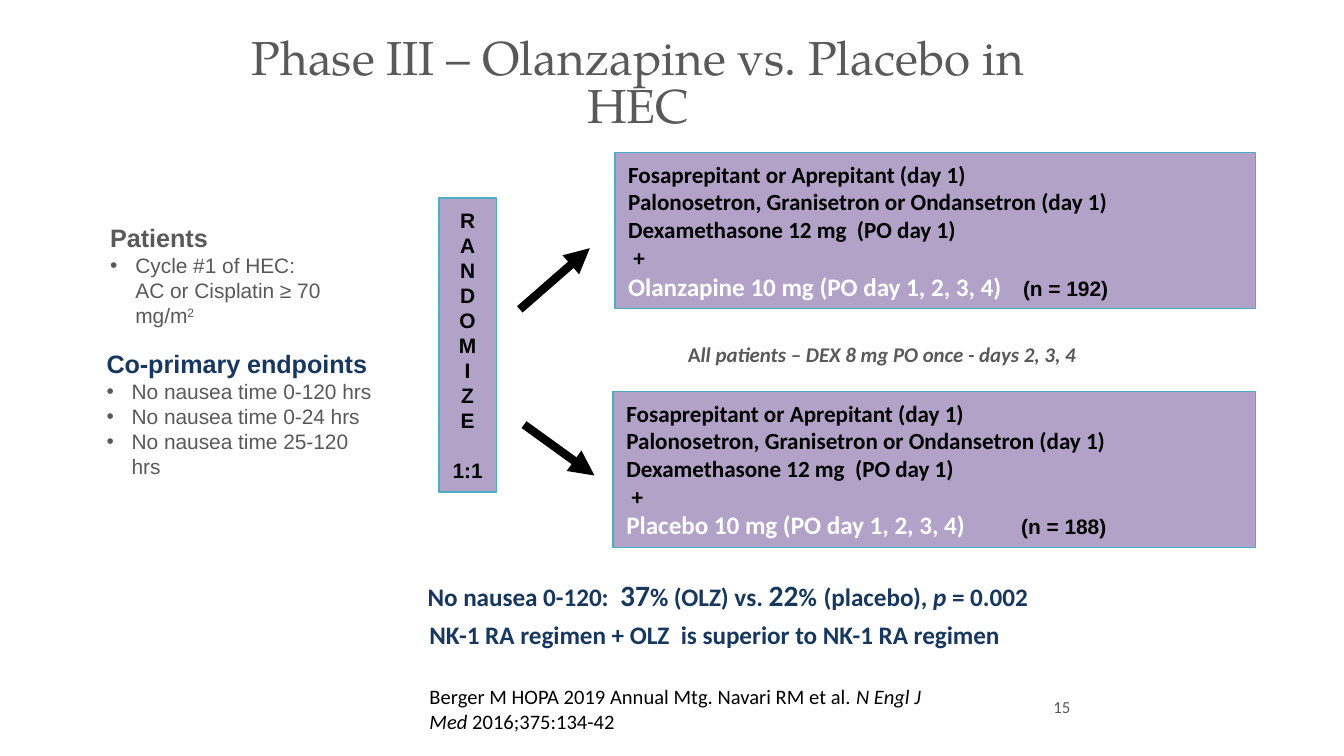
import pptx
import pptx.util
import pptx.dml.color
import pptx.enum.shapes
import pptx.enum.text
import pptx.oxml.ns
from lxml import etree

Pt = pptx.util.Pt
RGBColor = pptx.dml.color.RGBColor
Align = pptx.enum.text.PP_ALIGN
Anchor = pptx.enum.text.MSO_ANCHOR
qn = pptx.oxml.ns.qn

BLACK = RGBColor(0x00, 0x00, 0x00)
WHITE = RGBColor(0xFF, 0xFF, 0xFF)
GREY = RGBColor(0x59, 0x59, 0x59)
NAVY = RGBColor(0x17, 0x37, 0x5E)
LILAC = RGBColor(0xB3, 0xA2, 0xC7)
TEAL = RGBColor(0x4B, 0xAC, 0xC6)


class TrialSlide:
    """Holds the text style and the current slide; lengths are in points."""

    indent = 13.5

    def __init__(self, deck):
        self.page = deck.slides.add_slide(deck.slide_layouts[5])

    def span(self, para, text, size, color, font="Calibri", bold=False,
             italic=False, raised=False):
        span = para.add_run()
        span.text = text
        span.font.size = Pt(size)
        span.font.name = font
        span.font.bold = bold
        span.font.italic = italic
        span.font.color.rgb = color
        if raised:
            span.font._element.set("baseline", "30000")

    def fill_text(self, frame, lines, align=Align.LEFT, anchor=Anchor.TOP):
        """Each line is a list of (text, size, color, options) runs."""
        frame.word_wrap = True
        frame.auto_size = pptx.enum.text.MSO_AUTO_SIZE.NONE
        frame.vertical_anchor = anchor
        for index, runs in enumerate(lines):
            para = frame.add_paragraph() if index else frame.paragraphs[0]
            para.alignment = align
            for text, size, color, options in runs:
                self.span(para, text, size, color, **options)
        return frame

    def title(self, text, left, top, width, height):
        box = self.page.shapes.title
        box.left, box.top, box.width, box.height = map(Pt, (left, top, width, height))
        runs = [(text, 25.5, GREY, {"font": "TeX Gyre Pagella"})]
        frame = self.fill_text(box.text_frame, [runs], Align.CENTER, Anchor.MIDDLE)
        frame.paragraphs[0].line_spacing = 0.85

    def text(self, left, top, width, height, lines, align=Align.LEFT):
        box = self.page.shapes.add_textbox(*map(Pt, (left, top, width, height)))
        return self.fill_text(box.text_frame, lines, align)

    def bullets(self, left, top, width, height, heading, color, items):
        head = [(heading, 13.5, color, {"font": "Arial", "bold": True})]
        frame = self.text(left, top, width, height, [head])
        for parts in items:
            para = frame.add_paragraph()
            properties = para._p.get_or_add_pPr()
            properties.set("marL", str(Pt(self.indent)))
            properties.set("indent", str(-Pt(self.indent)))
            bullet_font = etree.SubElement(properties, qn("a:buFont"))
            bullet_font.set("typeface", "Arial")
            etree.SubElement(properties, qn("a:buChar")).set("char", "•")
            for text, raised in parts:
                if text == "\n":
                    para.add_line_break()
                else:
                    self.span(para, text, 11.2, GREY, "Arial", raised=raised)

    def panel(self, left, top, width, height, border, lines, align=Align.LEFT):
        box = self.page.shapes.add_shape(
            pptx.enum.shapes.MSO_SHAPE.RECTANGLE, *map(Pt, (left, top, width, height)))
        box.shadow.inherit = False
        box.fill.solid()
        box.fill.fore_color.rgb = LILAC
        box.line.color.rgb = TEAL
        box.line.width = Pt(border)
        return self.fill_text(box.text_frame, lines, align, Anchor.MIDDLE)

    def arm(self, left, top, width, height, drug, count):
        bold = {"bold": True}
        shared = ("Fosaprepitant or Aprepitant (day 1)",
                  "Palonosetron, Granisetron or Ondansetron (day 1)",
                  "Dexamethasone 12 mg  (PO day 1)",
                  " +")
        lines = [[(text, 12.4, BLACK, bold)] for text in shared]
        lines.append([(f"{drug} 10 mg (PO day 1, 2, 3, 4)\t", 13.5, WHITE, bold),
                      (f"(n = {count})", 11.2, BLACK, {"font": "Arial", "bold": True})])
        frame = self.panel(left, top, width, height, 0.75, lines)
        # Patient count sits on a tab stop
        properties = frame.paragraphs[-1]._p.get_or_add_pPr()
        stops = etree.SubElement(properties, qn("a:tabLst"))
        stop = etree.SubElement(stops, qn("a:tab"))
        stop.set("pos", str(Pt(211.5)))
        stop.set("algn", "l")

    def arrow(self, x1, y1, x2, y2):
        line = self.page.shapes.add_connector(
            pptx.enum.shapes.MSO_CONNECTOR.STRAIGHT, *map(Pt, (x1, y1, x2, y2)))
        line.line.color.rgb = BLACK
        line.line.width = Pt(4.5)
        etree.SubElement(line.line._get_or_add_ln(), qn("a:tailEnd")).set("type", "triangle")
        etree.SubElement(line._element.spPr, qn("a:effectLst"))


def main():
    deck = pptx.Presentation()
    deck.slide_width, deck.slide_height = Pt(720), Pt(405)
    slide = TrialSlide(deck)
    bold = {"bold": True}
    bold_italic = {"bold": True, "italic": True}

    slide.title("Phase III – Olanzapine vs. Placebo in HEC", 97, 24, 490, 43)

    # Patients and endpoints
    slide.bullets(52, 115.5, 152, 65, "Patients", GREY, [
        [("Cycle #1 of HEC:", False), ("\n", False),
         ("AC or Cisplatin ≥ 70 mg/m", False), ("2", True)]])
    slide.bullets(50, 183, 160, 78, "Co-primary endpoints", NAVY, [
        [(f"No nausea time {hours} hrs", False)] for hours in ("0-120", "0-24", "25-120")])

    # Randomization and the two arms
    slide.arrow(278.5, 165.75, 316, 133)
    slide.arrow(280.75, 227.5, 318.5, 254.75)
    arial_bold = {"font": "Arial", "bold": True}
    letters = [[(text, 11.2, BLACK, arial_bold)] for text in [*"RANDOMIZE", "1:1"]]
    column = slide.panel(235, 106, 31, 157.5, 1, letters, Align.CENTER)
    column.margin_left = column.margin_right = 0
    column.paragraphs[-1].space_before = Pt(13)
    slide.arm(329.5, 81.75, 343, 83.5, "Olanzapine", 192)
    slide.arm(328.5, 209.75, 344, 83.5, "Placebo", 188)
    slide.text(361.5, 179.5, 230, 21, [[
        ("A", 11.2, GREY, bold),
        ("ll patients – DEX 8 mg PO once - days 2, 3, 4", 11.2, GREY, bold_italic)]])

    # Results
    slide.text(222, 305.5, 345, 26, [[
        ("No nausea 0-120:  ", 13.5, NAVY, bold),
        ("37", 15.8, NAVY, bold),
        ("% (OLZ) vs. ", 13.5, NAVY, bold),
        ("22", 15.8, NAVY, bold),
        ("%", 13.5, NAVY, bold),
        (" ", 15.8, NAVY, bold),
        ("(placebo),", 13.5, NAVY, bold),
        (" p ", 13.5, NAVY, bold_italic),
        ("= 0.002", 13.5, NAVY, bold)]])
    slide.text(223, 328.5, 345, 24, [[
        ("NK-1 RA regimen + OLZ  is superior to NK-1 RA regimen", 13.5, NAVY, bold)]])

    # Citation and slide number
    slide.text(223, 363, 300, 34, [[
        ("Berger M HOPA 2019 Annual Mtg. Navari RM et al. ", 11, BLACK, {}),
        ("N Engl J Med ", 11, BLACK, {"italic": True}),
        ("2016;375:134-42", 11, BLACK, {})]])
    slide.text(454.5, 369.5, 126, 21.5, [[("15", 9, GREY, {})]], Align.RIGHT)

    deck.save("out.pptx")


if __name__ == "__main__":
    main()
